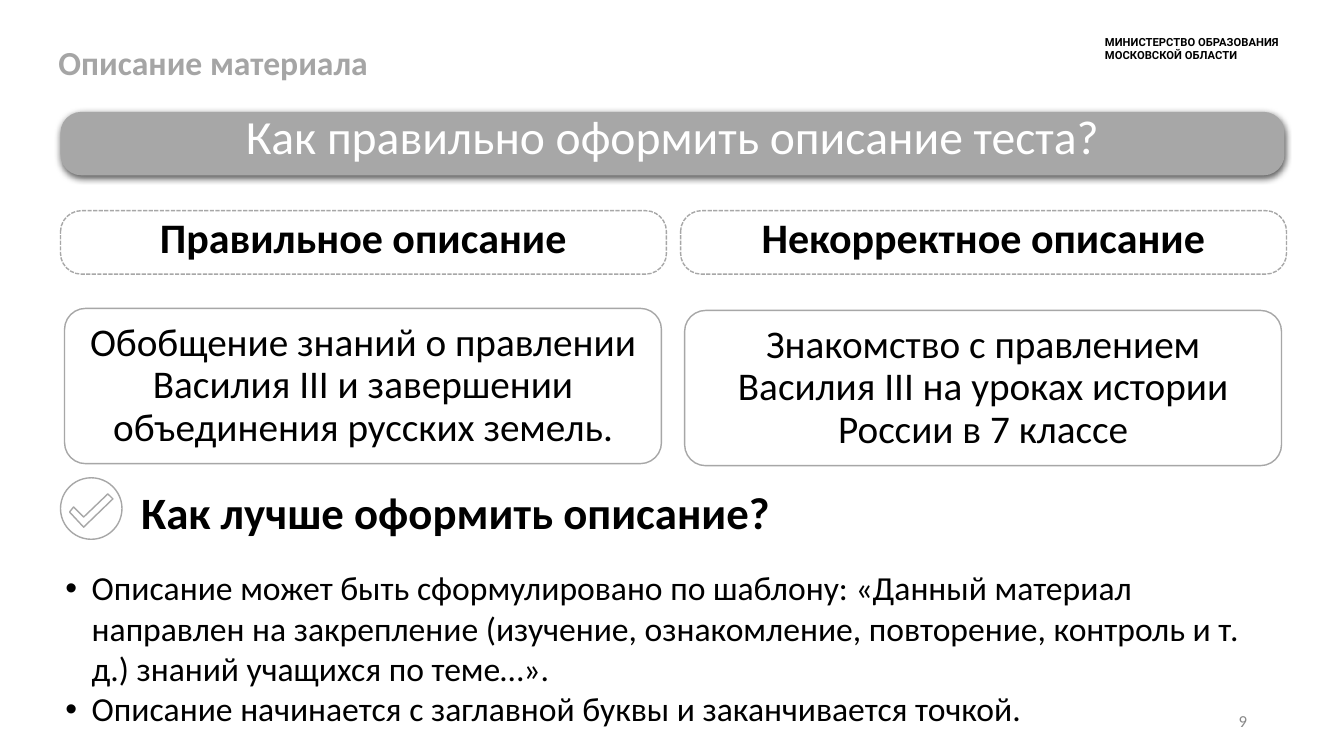
import pptx
import pptx.dml.color
import pptx.enum.dml
import pptx.enum.shapes
import pptx.enum.text
import pptx.oxml
import pptx.oxml.ns
import pptx.util
from pptx.util import Inches

COLORS = {"grey": "A7A7A7", "title": "A5A5A5", "number": "888888", "white": "FFFFFF", "black": "000000"}
ALIGN = pptx.enum.text.PP_ALIGN
ANCHOR = pptx.enum.text.MSO_ANCHOR
SHAPE = pptx.enum.shapes.MSO_SHAPE
NAMESPACE = pptx.oxml.ns.nsdecls("a")


def color(name):
    return pptx.dml.color.RGBColor.from_string(COLORS[name])


class SlideBuilder:
    font = "Calibri"
    inset = 0.05

    def __init__(self, slide):
        self.slide = slide

    def fill_text(self, shape, paragraphs, size, ink="black", bold=False, align=ALIGN.LEFT,
                  anchor=ANCHOR.TOP, spacing=1.0, inset=None, wrap=True, bullet=False, font=None):
        frame = shape.text_frame
        frame.word_wrap = wrap
        frame.auto_size = pptx.enum.text.MSO_AUTO_SIZE.NONE
        frame.vertical_anchor = anchor
        margin = Inches(self.inset if inset is None else inset)
        frame.margin_left = frame.margin_right = margin
        frame.margin_top = frame.margin_bottom = margin
        for index, text in enumerate(paragraphs):
            paragraph = frame.add_paragraph() if index else frame.paragraphs[0]
            paragraph.alignment = align
            paragraph.line_spacing = spacing
            if bullet:
                self.add_bullet(paragraph)
            run = paragraph.add_run()
            run.text = text
            run.font.name = font or self.font
            run.font.size = pptx.util.Pt(size)
            run.font.bold = bold
            run.font.color.rgb = color(ink)

    def add_bullet(self, paragraph):
        properties = paragraph._p.get_or_add_pPr()
        properties.set("marL", str(Inches(0.26)))
        properties.set("indent", str(-Inches(0.26)))
        properties.append(pptx.oxml.parse_xml(f'<a:buFont {NAMESPACE} typeface="Arial"/>'))
        properties.append(pptx.oxml.parse_xml(f'<a:buChar {NAMESPACE} char="•"/>'))

    def title(self, box, text, **style):
        shape = self.slide.shapes.title
        shape.left, shape.top, shape.width, shape.height = map(Inches, box)
        self.fill_text(shape, [text], **style)

    def text(self, box, paragraphs, **style):
        shape = self.slide.shapes.add_textbox(*map(Inches, box))
        self.fill_text(shape, paragraphs, **style)

    def paint(self, shape, fill="white", line="grey"):
        shape.shadow.inherit = False
        if fill:
            shape.fill.solid()
            shape.fill.fore_color.rgb = color(fill)
        else:
            shape.fill.background()
        if line:
            shape.line.color.rgb = color(line)
            shape.line.width = pptx.util.Pt(1)
        else:
            shape.line.fill.background()

    def card(self, box, text, rounding, fill="white", line="grey", dashed=False, **style):
        shape = self.slide.shapes.add_shape(SHAPE.ROUNDED_RECTANGLE, *map(Inches, box))
        shape.adjustments[0] = rounding
        self.paint(shape, fill, line)
        if dashed:
            shape.line.dash_style = pptx.enum.dml.MSO_LINE.SQUARE_DOT
        self.fill_text(shape, [text], align=ALIGN.CENTER, **style)
        return shape

    def add_shadow(self, shape):
        effects = shape._element.spPr.find(pptx.oxml.ns.qn("a:effectLst"))
        effects.append(pptx.oxml.parse_xml(
            f'<a:outerShdw {NAMESPACE} blurRad="{pptx.util.Pt(5)}" dist="{pptx.util.Pt(1.5)}" '
            f'dir="5400000" algn="ctr" rotWithShape="0"><a:srgbClr val="{COLORS["black"]}">'
            '<a:alpha val="63000"/></a:srgbClr></a:outerShdw>'))

    def check_mark(self, box, points):
        self.paint(self.slide.shapes.add_shape(SHAPE.OVAL, *map(Inches, box)))
        corners = [(Inches(x), Inches(y)) for x, y in points]
        builder = self.slide.shapes.build_freeform(*corners[0])
        builder.add_line_segments(corners[1:], close=True)
        self.paint(builder.convert_to_shape())


def main():
    presentation = pptx.Presentation()
    presentation.slide_width = Inches(13.33)
    presentation.slide_height = Inches(7.5)
    builder = SlideBuilder(presentation.slides.add_slide(presentation.slide_layouts[5]))

    builder.title((0.58, 0.42, 9.61, 0.33), "Описание материала",
                  size=24, ink="title", bold=True, inset=0)
    builder.text((10.91, 0.3, 2.23, 0.38), ["МИНИСТЕРСТВО ОБРАЗОВАНИЯ МОСКОВСКОЙ ОБЛАСТИ"],
                 size=8, bold=True, font="Roboto")
    banner = builder.card((0.6, 1.11, 12.14, 0.63), "Как правильно оформить описание теста?", 0.33,
                          fill="grey", line=None, size=34, ink="white", anchor=ANCHOR.BOTTOM)
    builder.add_shadow(banner)

    columns = [
        ("Правильное описание", 3.06,
         "Обобщение знаний о правлении Василия III и завершении объединения русских земель."),
        ("Некорректное описание", 3.08,
         "Знакомство с правлением Василия III на уроках истории России в 7 классе"),
    ]
    for index, (heading, top, example) in enumerate(columns):
        left = 0.6 + 6.15 * index
        builder.card((left, 2.09, 6.01, 0.63), heading, 0.33, dashed=True,
                     size=30, bold=True, anchor=ANCHOR.BOTTOM, spacing=0.9)
        builder.card((left + 0.04, top, 5.92, 1.54), example, 0.135, fill=None,
                     size=28, anchor=ANCHOR.MIDDLE, spacing=0.9)

    builder.check_mark((0.6, 4.74, 0.61, 0.61),
                       [(1.07, 4.9), (1.12, 4.95), (0.83, 5.23), (0.69, 5.08), (0.73, 5.03), (0.83, 5.13)])
    builder.text((1.35, 4.82, 6.35, 0.54), ["Как лучше оформить описание?"],
                 size=32, bold=True, spacing=0.9, wrap=False)
    builder.text((0.6, 5.58, 12.14, 1.64), [
        "Описание может быть сформулировано по шаблону: «Данный материал направлен на закрепление "
        "(изучение, ознакомление, повторение, контроль и т. д.) знаний учащихся по теме…».",
        "Описание начинается с заглавной буквы и заканчивается точкой.",
    ], size=24, bullet=True)
    builder.text((12.22, 7.02, 0.2, 0.27), ["9"], size=12, ink="number",
                 align=ALIGN.RIGHT, anchor=ANCHOR.MIDDLE, wrap=False)

    presentation.save("out.pptx")


if __name__ == "__main__":
    main()
